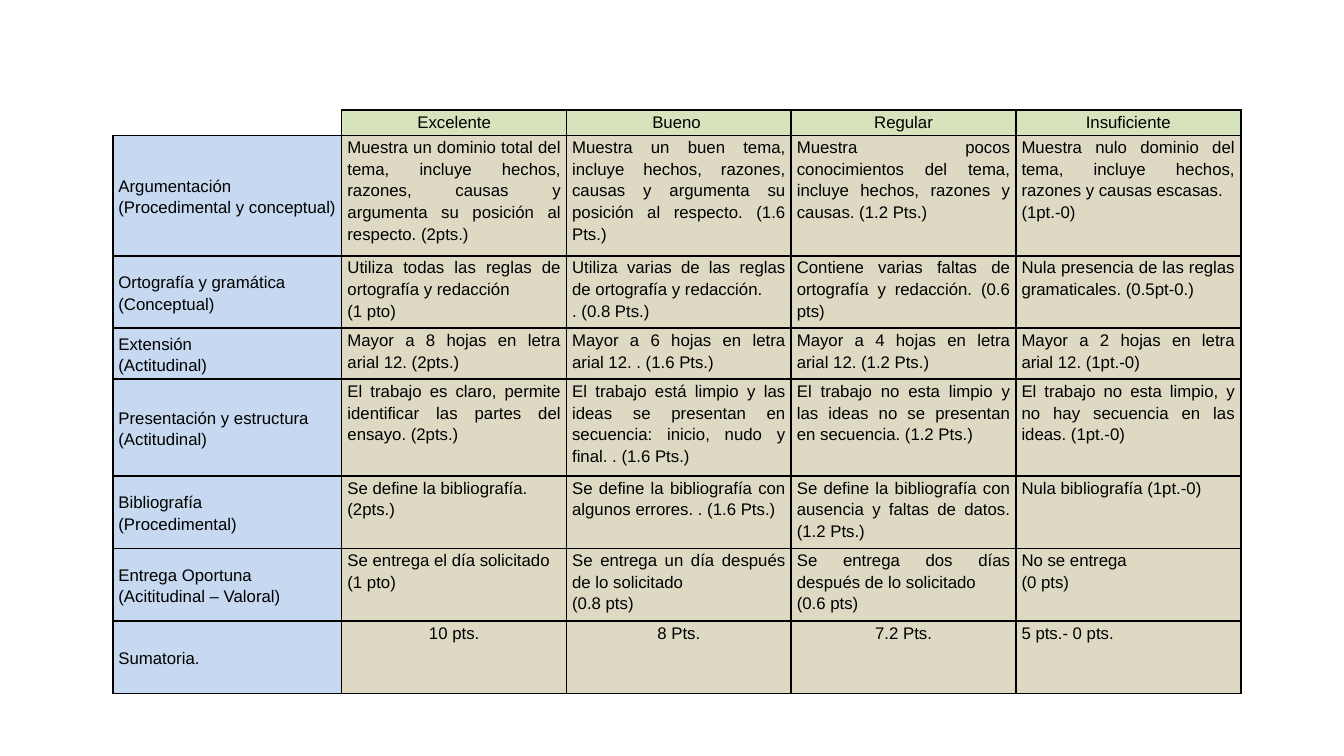
"""Build the essay assessment rubric slide."""
from dataclasses import dataclass

from lxml import etree
from pptx import Presentation
from pptx.dml.color import RGBColor
from pptx.enum.text import MSO_ANCHOR, PP_ALIGN
from pptx.oxml.ns import qn
from pptx.util import Pt

CENTER, JUSTIFY, LEFT = PP_ALIGN.CENTER, PP_ALIGN.JUSTIFY, PP_ALIGN.LEFT
MIDDLE, TOP = MSO_ANCHOR.MIDDLE, MSO_ANCHOR.TOP

RUBRIC = [
    ("", "Excelente", "Bueno ", "Regular", "Insuficiente"),
    ("Argumentación\n(Procedimental y conceptual)",
     "Muestra un dominio total del tema, incluye hechos, razones, causas y "
     "argumenta su posición al respecto. (2pts.)",
     "Muestra un buen tema, incluye hechos, razones, causas y argumenta su "
     "posición al respecto. (1.6 Pts.)",
     "Muestra pocos conocimientos del tema, incluye hechos, razones y causas. (1.2 Pts.)",
     "Muestra nulo dominio del tema, incluye hechos, razones y causas escasas. \n(1pt.-0)"),
    ("Ortografía y gramática\n(Conceptual)",
     "Utiliza todas las reglas de ortografía y redacción \n(1 pto)",
     "Utiliza varias de las reglas de ortografía y redacción.\n. (0.8 Pts.) ",
     "Contiene varias faltas de ortografía y redacción. (0.6 pts) ",
     "Nula presencia de las reglas gramaticales. (0.5pt-0.)"),
    ("Extensión\n(Actitudinal)",
     "Mayor a 8 hojas en letra arial 12. (2pts.)",
     "Mayor a 6 hojas en letra arial 12. . (1.6 Pts.)",
     "Mayor a 4 hojas en letra arial 12. (1.2 Pts.)",
     "Mayor a 2 hojas en letra arial 12. (1pt.-0)"),
    ("Presentación y estructura\n(Actitudinal)",
     "El trabajo es claro, permite identificar las partes del ensayo. (2pts.)",
     "El trabajo está limpio y las ideas se presentan en secuencia: inicio, "
     "nudo y final. . (1.6 Pts.)",
     "El trabajo no esta limpio y las ideas no se presentan en secuencia. (1.2 Pts.)",
     "El trabajo no esta limpio, y no hay secuencia en las ideas. (1pt.-0)"),
    ("Bibliografía\n(Procedimental)",
     "Se define la bibliografía.\n(2pts.)",
     "Se define la bibliografía con algunos errores. . (1.6 Pts.)",
     "Se define la bibliografía con ausencia y faltas de datos. (1.2 Pts.)",
     "Nula bibliografía (1pt.-0)"),
    ("Entrega Oportuna\n(Acititudinal – Valoral)",
     "Se entrega el día solicitado\n(1 pto)",
     "Se entrega un día después de lo solicitado\n(0.8 pts)",
     "Se entrega dos días después de lo solicitado\n(0.6 pts)",
     "No se entrega\n(0 pts)"),
    ("Sumatoria.", "10 pts.", "8 Pts.", "7.2 Pts.", "5 pts.- 0 pts."),
]
ROW_HEIGHTS = (18, 86, 51.8, 36.4, 69.1, 51.8, 51.8, 51.8)
COLUMN_WIDTHS = (163.6, 160.5, 160.5, 160.5, 160.5)
TABLE_LEFT, TABLE_TOP = 80.6, 78.8


@dataclass(frozen=True)
class Theme:
    """Hold the colours, type and line weights."""
    font: str = "Arial"
    size: float = 12
    spacing: float = 1.15
    inset: float = 4
    text: str = "000000"
    border: str = "000000"
    level: str = "D6E3BC"
    criterion: str = "C6D9F1"
    description: str = "DDD9C3"
    thick: float = 1.5
    thin: float = 1


THEME = Theme()


def cell_look(row, column):
    """Return the fill, alignment and anchor for a grid place."""
    if row == 0:
        return (THEME.level if column else None), CENTER, TOP
    if column == 0:
        return THEME.criterion, LEFT, MIDDLE
    total = row == len(RUBRIC) - 1 and column < len(COLUMN_WIDTHS) - 1
    return THEME.description, CENTER if total else JUSTIFY, TOP


def cell_borders(row, column):
    """Return the line weight of each side, zero for no line."""
    corner = row == 0 and column == 0
    outer = 0 if corner else THEME.thick
    return {
        "lnL": THEME.thin if column == 1 else outer,
        "lnR": THEME.thin if column == 0 else THEME.thick,
        "lnT": THEME.thin if (row, column) == (1, 0) else outer,
        "lnB": THEME.thin if corner else THEME.thick,
    }


def draw_borders(cell, weights):
    """Add the side lines to a cell."""
    properties = cell._tc.get_or_add_tcPr()
    for side, weight in weights.items():
        line = etree.SubElement(properties, qn(f"a:{side}"), w=str(int(Pt(weight))))
        if weight:
            paint = etree.SubElement(line, qn("a:solidFill"))
            etree.SubElement(paint, qn("a:srgbClr"), val=THEME.border)
        else:
            etree.SubElement(line, qn("a:noFill"))


def fill_cell(cell, wording, row, column):
    """Write and format one rubric cell."""
    fill, alignment, anchor = cell_look(row, column)
    draw_borders(cell, cell_borders(row, column))
    if fill:
        cell.fill.solid()
        cell.fill.fore_color.rgb = RGBColor.from_string(fill)
    else:
        cell.fill.background()
    cell.margin_left = cell.margin_right = Pt(THEME.inset)
    cell.margin_top = cell.margin_bottom = 0
    cell.vertical_anchor = anchor
    cell.text_frame.text = wording
    for paragraph in cell.text_frame.paragraphs:
        paragraph.alignment = alignment
        paragraph.line_spacing = THEME.spacing
        paragraph.font.name = THEME.font
        paragraph.font.size = Pt(THEME.size)
        paragraph.font.color.rgb = RGBColor.from_string(THEME.text)
        if not wording:
            etree.SubElement(paragraph._p, qn("a:endParaRPr"), sz=str(THEME.size * 100))


def main():
    """Build and save the slide."""
    deck = Presentation()
    deck.slide_width, deck.slide_height = Pt(960), Pt(540)
    slide = deck.slides.add_slide(deck.slide_layouts[6])
    table = slide.shapes.add_table(
        len(RUBRIC), len(COLUMN_WIDTHS), Pt(TABLE_LEFT), Pt(TABLE_TOP),
        Pt(sum(COLUMN_WIDTHS)), Pt(sum(ROW_HEIGHTS))).table
    table.first_row = table.horz_banding = False
    for column, width in zip(table.columns, COLUMN_WIDTHS):
        column.width = Pt(width)
    for row, height in zip(table.rows, ROW_HEIGHTS):
        row.height = Pt(height)
    for row, criterion in enumerate(RUBRIC):
        for column, wording in enumerate(criterion):
            fill_cell(table.cell(row, column), wording, row, column)
    deck.save("out.pptx")


if __name__ == "__main__":
    main()
